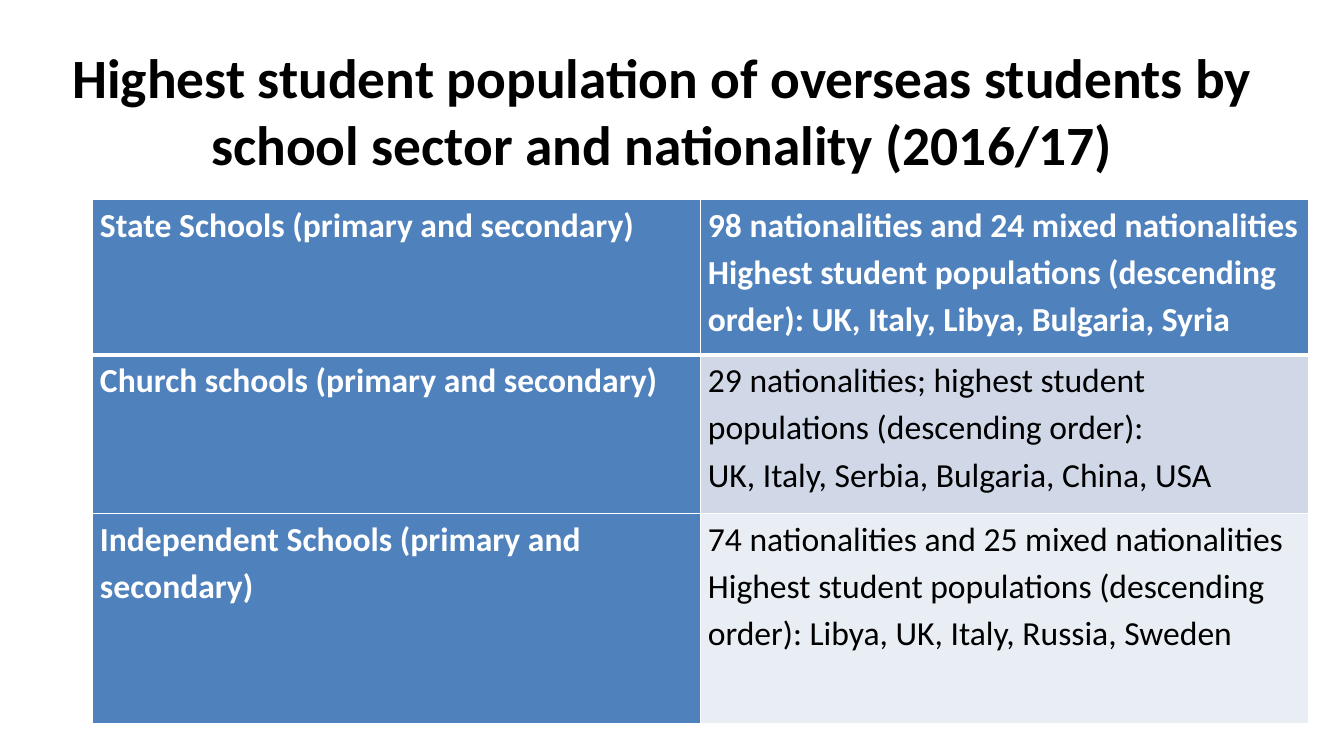
from dataclasses import dataclass

from lxml.etree import SubElement
from pptx import Presentation
from pptx.dml.color import RGBColor
from pptx.enum.text import MSO_ANCHOR, PP_ALIGN
from pptx.oxml.ns import qn
from pptx.util import Cm, Pt

TITLE = ("Highest student population of overseas students by "
         "school sector and nationality (2016/17)")
SECTORS = [
    ("State Schools (primary and secondary)",
     ["98 nationalities and 24 mixed nationalities",
      "Highest student populations (descending order): "
      "UK, Italy, Libya, Bulgaria, Syria"]),
    ("Church schools (primary and secondary)",
     ["29 nationalities; highest student populations (descending order):",
      "UK, Italy, Serbia, Bulgaria, China, USA"]),
    ("Independent Schools (primary and secondary)",
     ["74 nationalities and 25 mixed nationalities",
      "Highest student populations (descending order): "
      "Libya, UK, Italy, Russia, Sweden"]),
]
HEIGHTS = [3.91, 3.99, 5.31]
WIDTH = 15.32


@dataclass(frozen=True)
class Theme:
    font: str = "Calibri"
    title: float = 39.6
    body: float = 24
    dark: str = "000000"
    light: str = "FFFFFF"
    blue: str = "4F81BD"
    bands: tuple = ("E9EDF4", "D0D8E8")
    thin: float = 1
    thick: float = 3


THEME = Theme()


def write(frame, lines, size=THEME.body, color=THEME.dark, bold=False,
          align=PP_ALIGN.LEFT, space=1.0):
    for i, line in enumerate(lines):
        para = frame.paragraphs[0] if i == 0 else frame.add_paragraph()
        para.alignment = align
        para.line_spacing = space
        run = para.add_run()
        run.text = line
        font = run.font
        font.name, font.size, font.bold = THEME.font, Pt(size), bold
        font.color.rgb = RGBColor.from_string(color)


def edge(cell, row):
    """Draw the cell's borders, with a thick rule under the first row."""
    props = cell._tc.get_or_add_tcPr()
    for side in "LRTB":
        heavy = (row, side) in {(0, "B"), (1, "T")}
        width = THEME.thick if heavy else THEME.thin
        line = SubElement(props, qn(f"a:ln{side}"), w=str(Pt(width)))
        fill = SubElement(line, qn("a:solidFill"))
        SubElement(fill, qn("a:srgbClr"), val=THEME.light)


def dress(cell, row, fill):
    edge(cell, row)
    cell.fill.solid()
    cell.fill.fore_color.rgb = RGBColor.from_string(fill)
    cell.margin_left = cell.margin_right = Cm(0.18)
    cell.margin_top = cell.margin_bottom = 0


def add_title(slide):
    box = slide.shapes.add_textbox(Cm(0.84), Cm(0.84), Cm(31.7), Cm(3.86))
    frame = box.text_frame
    frame.word_wrap = True
    frame.vertical_anchor = MSO_ANCHOR.MIDDLE
    write(frame, [TITLE], size=THEME.title, bold=True, align=PP_ALIGN.CENTER)


def add_grid(slide):
    grid = slide.shapes.add_table(len(SECTORS), 2, Cm(2.34), Cm(5.03),
                                  Cm(2 * WIDTH), Cm(sum(HEIGHTS))).table
    for col in grid.columns:
        col.width = Cm(WIDTH)
    for row, (sector, facts) in enumerate(SECTORS):
        grid.rows[row].height = Cm(HEIGHTS[row])
        for col, lines in enumerate([[sector], facts]):
            cell = grid.cell(row, col)
            head = row == 0 or col == 0
            dress(cell, row, THEME.blue if head else THEME.bands[row % 2])
            write(cell.text_frame, lines, bold=head, space=1.15,
                  color=THEME.light if head else THEME.dark)


def main():
    deck = Presentation()
    deck.slide_width, deck.slide_height = Cm(33.87), Cm(19.05)
    slide = deck.slides.add_slide(deck.slide_layouts[6])
    add_title(slide)
    add_grid(slide)
    deck.save("out.pptx")


if __name__ == "__main__":
    main()
